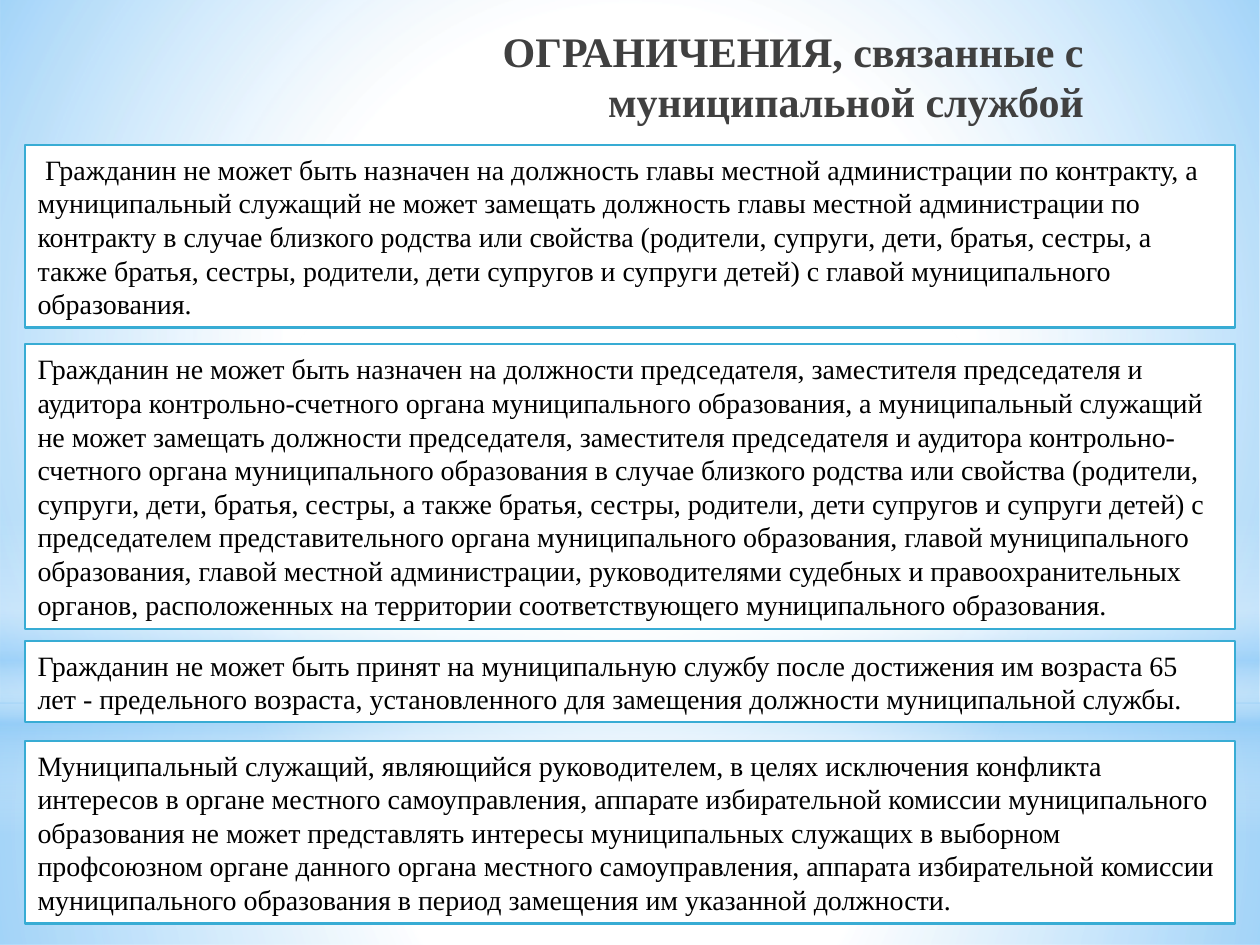
from lxml import etree
from pptx import Presentation
from pptx.dml.color import RGBColor
from pptx.enum.shapes import MSO_SHAPE
from pptx.enum.text import MSO_ANCHOR, PP_ALIGN
from pptx.oxml.ns import qn
from pptx.util import Inches, Pt

RECTANGLE, OVAL = MSO_SHAPE.RECTANGLE, MSO_SHAPE.OVAL
MIDDLE = MSO_ANCHOR.MIDDLE
LEFT, RIGHT = PP_ALIGN.LEFT, PP_ALIGN.RIGHT

THEME = {
    "font": "Times New Roman",
    "title_size": 24, "body_size": 16,
    "title": "404040", "body": "000000",
    "panel": "FFFFFF", "border": "38ACD4", "border_width": 1.25,
    "white": "FFFFFF", "sky": "8BC9F7",
}

# Content
TITLE = "ОГРАНИЧЕНИЯ, связанные с муниципальной службой"

# Panels: top in inches, number of text lines, first-line indent, text
PANELS = [
    (1.15, 5, 0.06,
     "Гражданин не может быть назначен на должность главы местной администрации по контракту, "
     "а муниципальный служащий не может замещать должность главы местной администрации по "
     "контракту в случае близкого родства или свойства (родители, супруги, дети, братья, сестры, "
     "а также братья, сестры, родители, дети супругов и супруги детей) с главой муниципального "
     "образования."),
    (2.73, 8, 0,
     "Гражданин не может быть назначен на должности председателя, заместителя председателя и "
     "аудитора контрольно-счетного органа муниципального образования, а муниципальный служащий "
     "не может замещать должности председателя, заместителя председателя и аудитора "
     "контрольно-счетного органа муниципального образования в случае близкого родства или "
     "свойства (родители, супруги, дети, братья, сестры, а также братья, сестры, родители, дети "
     "супругов и супруги детей) с председателем представительного органа муниципального "
     "образования, главой муниципального образования, главой местной администрации, "
     "руководителями судебных и правоохранительных органов, расположенных на территории "
     "соответствующего муниципального образования."),
    (5.09, 2, 0,
     "Гражданин не может быть принят на муниципальную службу после достижения им возраста 65 "
     "лет - предельного возраста, установленного для замещения должности муниципальной службы."),
    (5.88, 5, 0,
     "Муниципальный служащий, являющийся руководителем, в целях исключения конфликта интересов "
     "в органе местного самоуправления, аппарате избирательной комиссии муниципального "
     "образования не может представлять интересы муниципальных служащих в выборном профсоюзном "
     "органе данного органа местного самоуправления, аппарата избирательной комиссии "
     "муниципального образования в период замещения им указанной должности."),
]

# Backdrop: shape, top, height, radial or not, stops (position %, colour, opacity %)
BACKDROP = [
    (RECTANGLE, 5.58, 1.92, True, [(0, "white", 91), (37, "white", 76), (100, "sky", 79)]),
    (RECTANGLE, 0, 5.58, True, [(0, "white", 89), (48, "white", 62), (100, "sky", 79)]),
    (RECTANGLE, 4.12, 2.5, False, [(0, "white", 0), (29, "white", 30), (45, "sky", 40),
                                   (55, "white", 26), (65, "sky", 60), (100, "white", 0)]),
    (OVAL, 1.75, 5.58, True, [(0, "white", 100), (56, "white", 0)]),
]

# Layout
SLIDE_WIDTH, SLIDE_HEIGHT = 10, 7.5
PANEL_MARGIN = 0.2
LINE_HEIGHT, PANEL_PADDING = 0.27, 0.1
TITLE_BOX = (1.38, 0.13, 7.32, 0.94)
TITLE_INDENT = 0.35


def fill_gradient(shape, radial, stops):
    properties = shape._element.spPr
    gradient = etree.Element(qn("a:gradFill"), rotWithShape="1")
    stop_list = etree.SubElement(gradient, qn("a:gsLst"))
    for position, colour, opacity in stops:
        stop = etree.SubElement(stop_list, qn("a:gs"), pos=str(position * 1000))
        value = etree.SubElement(stop, qn("a:srgbClr"), val=THEME[colour])
        if opacity < 100:
            etree.SubElement(value, qn("a:alpha"), val=str(opacity * 1000))
    if radial:
        path = etree.SubElement(gradient, qn("a:path"), path="circle")
        etree.SubElement(path, qn("a:fillToRect"), l="50000", t="50000", r="50000", b="50000")
    else:
        etree.SubElement(gradient, qn("a:lin"), ang="5400000", scaled="0")
    properties.find(qn("a:prstGeom")).addnext(gradient)


def add_shape(slide, kind, *box):
    shape = slide.shapes.add_shape(kind, *map(Inches, box))
    shape.shadow.inherit = False
    return shape


def write(shape, text, size, colour, alignment, bold=False, margin=0, indent=0):
    frame = shape.text_frame
    frame.word_wrap = True
    frame.vertical_anchor = MIDDLE
    frame.text = text
    paragraph = frame.paragraphs[0]
    paragraph.alignment = alignment
    properties = paragraph._p.get_or_add_pPr()
    properties.set("marL", str(Inches(margin)))
    properties.set("indent", str(Inches(indent)))
    font = paragraph.runs[0].font
    font.name = THEME["font"]
    font.size = Pt(THEME[size])
    font.bold = bold
    font.color.rgb = RGBColor.from_string(THEME[colour])


def main():
    presentation = Presentation()
    presentation.slide_width = Inches(SLIDE_WIDTH)
    presentation.slide_height = Inches(SLIDE_HEIGHT)
    slide = presentation.slides.add_slide(presentation.slide_layouts[6])

    # Backdrop
    for kind, top, height, radial, stops in BACKDROP:
        shape = add_shape(slide, kind, 0, top, SLIDE_WIDTH, height)
        shape.line.fill.background()
        fill_gradient(shape, radial, stops)

    # Panels
    for top, lines, indent, text in PANELS:
        panel = add_shape(slide, RECTANGLE, PANEL_MARGIN, top, SLIDE_WIDTH - 2 * PANEL_MARGIN,
                          lines * LINE_HEIGHT + PANEL_PADDING)
        panel.fill.solid()
        panel.fill.fore_color.rgb = RGBColor.from_string(THEME["panel"])
        panel.line.color.rgb = RGBColor.from_string(THEME["border"])
        panel.line.width = Pt(THEME["border_width"])
        write(panel, text, "body_size", "body", LEFT, indent=indent)

    # Title
    title = slide.shapes.add_textbox(*map(Inches, TITLE_BOX))
    write(title, TITLE, "title_size", "title", RIGHT, bold=True, margin=TITLE_INDENT)

    presentation.save("out.pptx")


if __name__ == "__main__":
    main()
